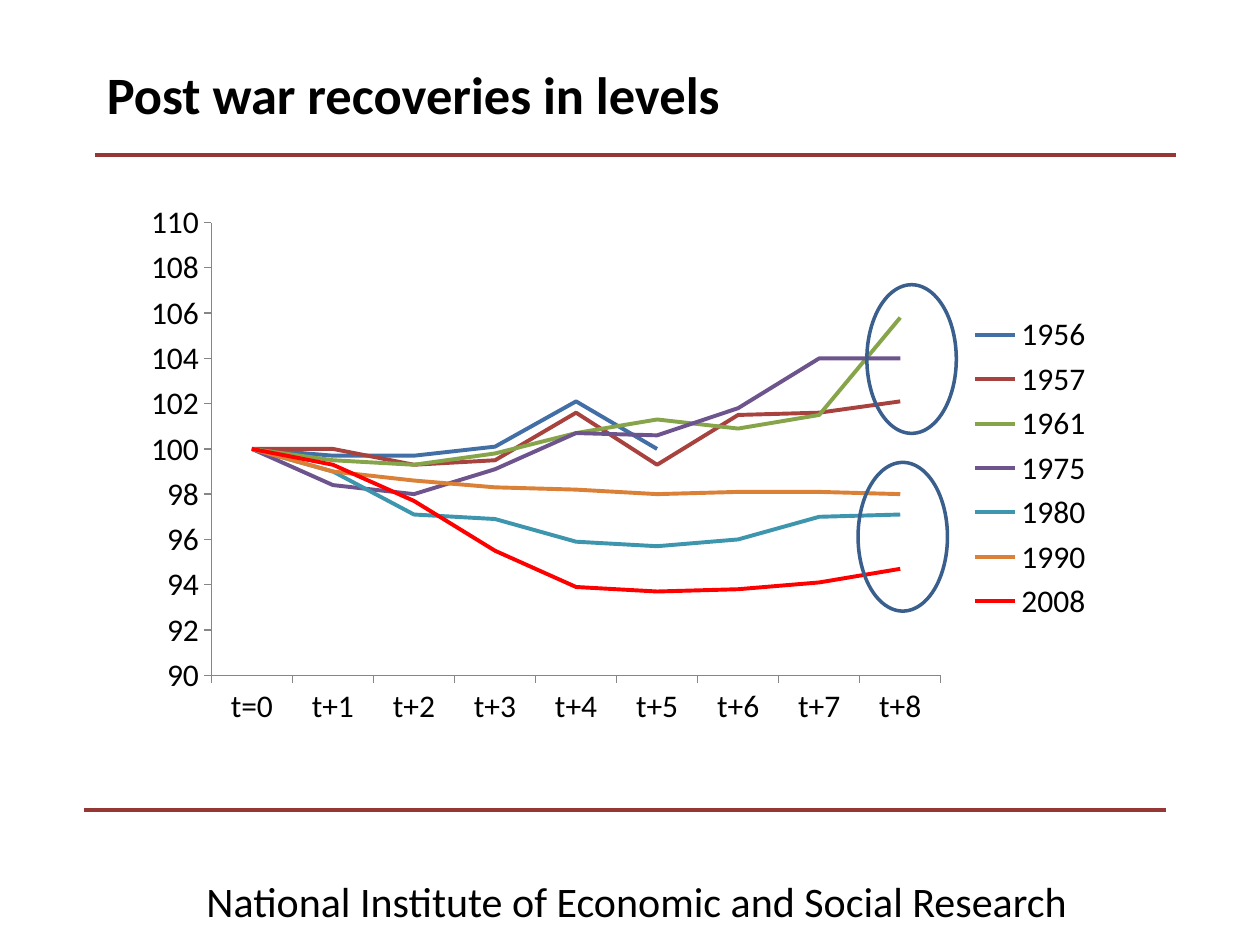
from lxml.etree import SubElement
from pptx import Presentation
from pptx.chart.data import CategoryChartData
from pptx.dml.color import RGBColor
from pptx.enum.chart import XL_CHART_TYPE, XL_LEGEND_POSITION, XL_TICK_MARK
from pptx.enum.shapes import MSO_CONNECTOR, MSO_SHAPE
from pptx.oxml.ns import qn
from pptx.util import Inches, Pt

FONT = "Calibri"
BLACK = RGBColor(0x00, 0x00, 0x00)
RULE_RED = RGBColor(0x95, 0x37, 0x35)
RING_BLUE = RGBColor(0x3A, 0x5F, 0x8C)
AXIS_GREY = RGBColor(0x86, 0x86, 0x86)

QUARTERS = ["t=0"] + [f"t+{n}" for n in range(1, 9)]
# Recession year: line colour, output level with t=0 at 100
RECOVERIES = {
    "1956": (RGBColor(0x41, 0x6F, 0xA6),
             [100, 99.7, 99.7, 100.1, 102.1, 100, None, None, None]),
    "1957": (RGBColor(0xA8, 0x42, 0x3F),
             [100, 100, 99.3, 99.5, 101.6, 99.3, 101.5, 101.6, 102.1]),
    "1961": (RGBColor(0x86, 0xA4, 0x4A),
             [100, 99.5, 99.3, 99.8, 100.7, 101.3, 100.9, 101.5, 105.8]),
    "1975": (RGBColor(0x6E, 0x54, 0x8D),
             [100, 98.4, 98, 99.1, 100.7, 100.6, 101.8, 104, 104]),
    "1980": (RGBColor(0x3D, 0x96, 0xAE),
             [100, 99, 97.1, 96.9, 95.9, 95.7, 96, 97, 97.1]),
    "1990": (RGBColor(0xDA, 0x81, 0x37),
             [100, 99, 98.6, 98.3, 98.2, 98, 98.1, 98.1, 98]),
    "2008": (RGBColor(0xFF, 0x00, 0x00),
             [100, 99.3, 97.7, 95.5, 93.9, 93.7, 93.8, 94.1, 94.7]),
}


def add_rule(slide, left, top, width=8.58):
    rule = slide.shapes.add_connector(
        MSO_CONNECTOR.STRAIGHT, Inches(left), Inches(top),
        Inches(left + width), Inches(top))
    rule.line.color.rgb = RULE_RED
    rule.line.width = Pt(2.25)
    SubElement(rule.line._get_or_add_ln().getparent(), qn("a:effectLst"))


def add_text(slide, text, left, top, width, height, size, bold=False):
    box = slide.shapes.add_textbox(
        Inches(left), Inches(top), Inches(width), Inches(height))
    box.text_frame.word_wrap = True
    paragraph = box.text_frame.paragraphs[0]
    paragraph.text = text
    paragraph.font.name = FONT
    paragraph.font.size = Pt(size)
    paragraph.font.bold = bold
    paragraph.font.color.rgb = BLACK


def set_plot_layout(chart, x, y, w, h):
    """Fix the inner plot area, in fractions of the chart."""
    plot_area = chart._chartSpace.chart.plotArea
    layout = plot_area.find(qn("c:layout"))
    if layout is None:
        layout = SubElement(plot_area, qn("c:layout"))
        plot_area.insert(0, layout)
    manual = SubElement(layout, qn("c:manualLayout"))
    settings = [("layoutTarget", "inner"), ("xMode", "edge"), ("yMode", "edge"),
                ("x", x), ("y", y), ("w", w), ("h", h)]
    for name, value in settings:
        SubElement(manual, qn(f"c:{name}")).set("val", str(value))


def add_recovery_chart(slide):
    data = CategoryChartData()
    data.categories = QUARTERS
    for year, (_, levels) in RECOVERIES.items():
        data.add_series(year, levels)
    chart = slide.shapes.add_chart(
        XL_CHART_TYPE.LINE, Inches(1.06), Inches(1.55),
        Inches(7.72), Inches(4.33), data).chart
    chart.has_title = False
    chart.font.name = FONT
    chart.font.size = Pt(18)
    chart.font.color.rgb = BLACK
    chart.has_legend = True
    chart.legend.position = XL_LEGEND_POSITION.RIGHT
    chart.legend.include_in_layout = False
    set_plot_layout(chart, 0.08, 0.05, 0.75, 0.83)

    # Axes
    for axis in (chart.category_axis, chart.value_axis):
        axis.has_major_gridlines = False
        axis.major_tick_mark = XL_TICK_MARK.OUTSIDE
        axis.format.line.color.rgb = AXIS_GREY
        axis.format.line.width = Pt(0.75)
    chart.value_axis.minimum_scale = 90
    chart.value_axis.maximum_scale = 110
    chart.value_axis.major_unit = 2

    # One line per recession
    chart.plots[0].vary_by_categories = False
    for series, (color, _) in zip(chart.plots[0].series, RECOVERIES.values()):
        series.smooth = False
        series.format.line.color.rgb = color
        series.format.line.width = Pt(2.25)


def add_ring(slide, left, top):
    ring = slide.shapes.add_shape(
        MSO_SHAPE.OVAL, Inches(left), Inches(top), Inches(0.71), Inches(1.18))
    ring.shadow.inherit = False
    ring.fill.background()
    ring.line.color.rgb = RING_BLUE
    ring.line.width = Pt(2)


def main():
    prs = Presentation()
    prs.slide_width, prs.slide_height = Inches(10), Inches(7.5)
    slide = prs.slides.add_slide(prs.slide_layouts[6])

    # Header and footer
    add_rule(slide, 0.75, 1.23)
    add_rule(slide, 0.67, 6.43)
    add_text(slide, "National Institute of Economic and Social Research",
             1.54, 6.9, 7.95, 0.4, 24)
    add_text(slide, "Post war recoveries in levels",
             0.75, 0.44, 6.61, 0.61, 30, bold=True)

    # Chart, with rings round the strong and weak recoveries
    add_recovery_chart(slide)
    add_ring(slide, 6.88, 2.26)
    add_ring(slide, 6.81, 3.67)

    prs.save("out.pptx")


if __name__ == "__main__":
    main()
